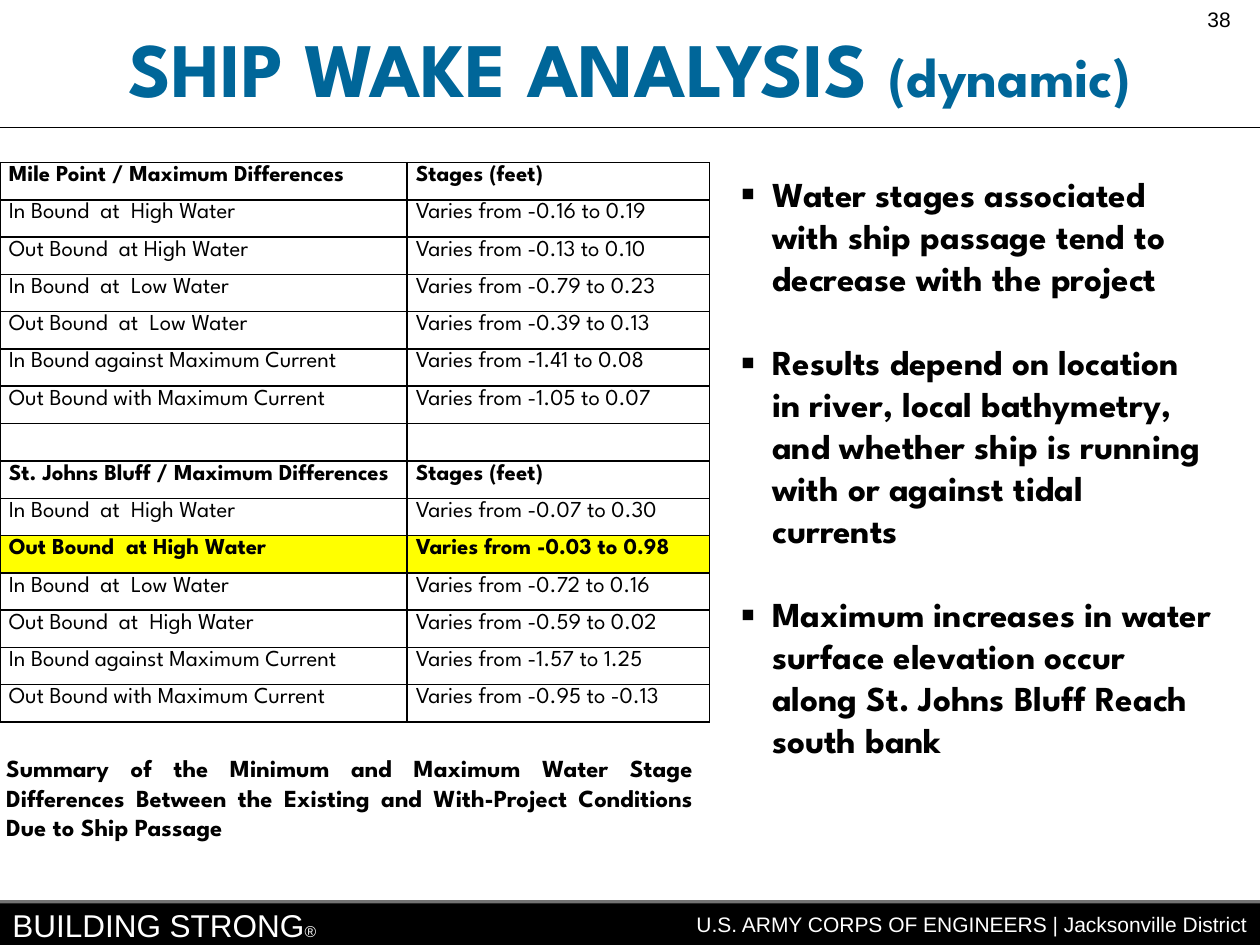
from pptx import Presentation, util as u
from pptx.dml.color import RGBColor
from pptx.enum import shapes, text as t
from pptx.oxml import ns, xmlchemy as x

BLACK, WHITE, BLUE, YELLOW = "000000", "FFFFFF", "006699", "FFFF00"
HEAD, BODY = "League Spartan", "Arial"
LEFT, RIGHT, MID, JUST = (t.PP_ALIGN.LEFT, t.PP_ALIGN.RIGHT,
                          t.PP_ALIGN.CENTER, t.PP_ALIGN.JUSTIFY)

WAYS = ["In Bound  at  High Water", "Out Bound  at High Water",
        "In Bound  at  Low Water", "Out Bound  at  Low Water",
        "In Bound against Maximum Current", "Out Bound with Maximum Current"]
BLUFF = WAYS[:3] + ["Out Bound  at  High Water"] + WAYS[4:]
MILE = ["-0.16 to 0.19", "-0.13 to 0.10", "-0.79 to 0.23",
        "-0.39 to 0.13", "-1.41 to 0.08", "-1.05 to 0.07"]
JOHNS = ["-0.07 to 0.30", "-0.03 to 0.98", "-0.72 to 0.16",
         "-0.59 to 0.02", "-1.57 to 1.25", "-0.95 to -0.13"]
POINTS = [
    "Water stages associated with ship passage tend to decrease with the project",
    "Results depend on location in river, local bathymetry, and whether ship "
    "is running with or against tidal currents",
    "Maximum increases in water surface elevation occur along St. Johns Bluff "
    "Reach south bank",
]


def rgb(code):
    """Turn a hex string into a colour."""
    return RGBColor.from_string(code)


def put(item, vals):
    """Set attributes from a dict of values."""
    for key, val in vals.items():
        setattr(item, key, val)


def sub(node, tag, **vals):
    """Append a drawing element with attributes."""
    kid = x.OxmlElement(tag)
    for key, val in vals.items():
        kid.set(key, str(val))
    node.append(kid)
    return kid


def place(at):
    """Turn a box in inches into lengths."""
    return [u.Inches(v) for v in at]


class Deck:
    """Hold the style and the current slide."""

    def __init__(self, wide, high):
        """Start a deck with one title-only slide."""
        self.prs = Presentation()
        put(self.prs, {"slide_width": u.Inches(wide), "slide_height": u.Inches(high)})
        self.slide = self.prs.slides.add_slide(self.prs.slide_layouts[5])
        self.items = self.slide.shapes

    def run(self, para, words, size, face=HEAD, color=BLACK, bold=False):
        """Add one run of styled text."""
        run = para.add_run()
        run.text = words
        put(run.font, {"size": u.Pt(size), "name": face, "bold": bold})
        run.font.color.rgb = rgb(color)

    def title(self, at, parts):
        """Place the title and fill it with sized parts."""
        item = self.items.title
        put(item, dict(zip(("left", "top", "width", "height"), place(at))))
        put(item.text_frame, {"vertical_anchor": t.MSO_ANCHOR.TOP,
                              "auto_size": t.MSO_AUTO_SIZE.NONE, "word_wrap": True})
        para = item.text_frame.paragraphs[0]
        para.alignment = MID
        for words, size in parts:
            self.run(para, words, size, color=BLUE, bold=True)

    def text(self, at, parts, align=LEFT, anchor=t.MSO_ANCHOR.TOP, space=1, **look):
        """Add a text box with one paragraph of sized parts."""
        frame = self.items.add_textbox(*place(at)).text_frame
        put(frame, {"word_wrap": True, "vertical_anchor": anchor})
        para = frame.paragraphs[0]
        put(para, {"alignment": align, "line_spacing": space})
        for words, size in parts:
            self.run(para, words, size, **look)

    def bullets(self, at, points, size):
        """Add a square-bulleted list with one line between points."""
        frame = self.items.add_textbox(*place(at)).text_frame
        frame.word_wrap = True
        for i, words in enumerate(points):
            para = frame.add_paragraph() if i else frame.paragraphs[0]
            if i:
                para.space_before = u.Pt(size * 1.2)
            props = para._p.get_or_add_pPr()
            props.set("marL", str(u.Inches(0.25)))
            props.set("indent", str(-u.Inches(0.25)))
            sub(props, "a:buSzPct", val=120000)
            sub(props, "a:buFont", typeface=BODY)
            sub(props, "a:buChar", char="▪")
            self.run(para, words, size, bold=True)

    def box(self, at, color, alpha=None):
        """Add a filled rectangle, see-through if alpha is given."""
        item = self.items.add_shape(shapes.MSO_SHAPE.RECTANGLE, *place(at))
        item.shadow.inherit = False
        item.fill.solid()
        item.fill.fore_color.rgb = rgb(color)
        if alpha is None:
            item.line.color.rgb = rgb(color)
            item.line.width = u.Pt(0.75)
        else:
            item.line.fill.background()
            tint = item._element.spPr.find(".//" + ns.qn("a:srgbClr"))
            sub(tint, "a:alpha", val=alpha * 1000)

    def line(self, ends, color=BLACK):
        """Add a straight thin line."""
        item = self.items.add_connector(shapes.MSO_CONNECTOR.STRAIGHT, *place(ends))
        item.line.color.rgb = rgb(color)
        item.line.width = u.Pt(0.75)
        sub(item._element.spPr, "a:effectLst")

    def cell(self, cell, words, bold, fill):
        """Style one table cell and its borders."""
        put(cell, {"margin_left": u.Inches(0.07), "margin_right": u.Inches(0.07),
                   "margin_top": 0, "margin_bottom": 0})
        para = cell.text_frame.paragraphs[0]
        put(para, {"alignment": JUST, "line_spacing": 1.15})
        self.run(para, words, 13, bold=bold)
        props = cell._tc.get_or_add_tcPr()
        for side in "LRTB":
            edge = sub(props, "a:ln" + side, w=u.Pt(1))
            sub(sub(edge, "a:solidFill"), "a:srgbClr", val=BLACK)
        if fill:
            cell.fill.solid()
            cell.fill.fore_color.rgb = rgb(fill)
        else:
            cell.fill.background()

    def table(self, at, cols, rows, heads, marks):
        """Add a bordered table with bold heads and marked rows."""
        grid = self.items.add_table(len(rows), len(cols), *place(at)).table
        put(grid, {"first_row": False, "horz_banding": False})
        for col, wide in zip(grid.columns, cols):
            col.width = u.Inches(wide)
        for r, row in enumerate(rows):
            for c, words in enumerate(row):
                self.cell(grid.cell(r, c), words, r in heads + marks,
                          YELLOW if r in marks else None)


def main():
    """Build the slide and save it."""
    deck = Deck(10, 7.5)
    deck.box((0, 7.15, 10, 0.35), BLACK)
    deck.text((0, 7.14, 4.14, 0.28), [("BUILDING STRONG", 18), ("®", 9)],
              face=BODY, color=WHITE)
    deck.text((4.49, 7.21, 5.51, 0.28),
              [("U.S. ARMY CORPS OF ENGINEERS | Jacksonville District", 12)],
              RIGHT, space=0.9, face=BODY, color=WHITE)
    deck.box((0, 4.7, 10, 2.47), WHITE, 45)
    deck.bullets((5.78, 1.32, 3.94, 5.1), POINTS, 20)
    deck.text((9.35, 0, 0.65, 0.38), [("38", 12)], MID, face=BODY)
    rows = [("Mile Point / Maximum Differences", "Stages (feet)")]
    rows += [(way, "Varies from " + val) for way, val in zip(WAYS, MILE)]
    rows += [("", ""), ("St. Johns Bluff / Maximum Differences", "Stages (feet)")]
    rows += [(way, "Varies from " + val) for way, val in zip(BLUFF, JOHNS)]
    deck.table((0, 1.29, 5.63, 4.44), (3.23, 2.4), rows, [0, 8], [10])
    deck.text((-0.05, 5.93, 5.65, 0.8),
              [("Summary of the Minimum and Maximum Water Stage Differences Between "
                "the Existing and With-Project Conditions Due to Ship Passage", 14)],
              JUST, t.MSO_ANCHOR.MIDDLE, bold=True)
    deck.title((0, 0.11, 10, 1.25), [("SHIP WAKE ANALYSIS ", 44), ("(dynamic)", 32)])
    deck.line((0, 1.01, 10, 1.01))
    deck.prs.save("out.pptx")


if __name__ == "__main__":
    main()
